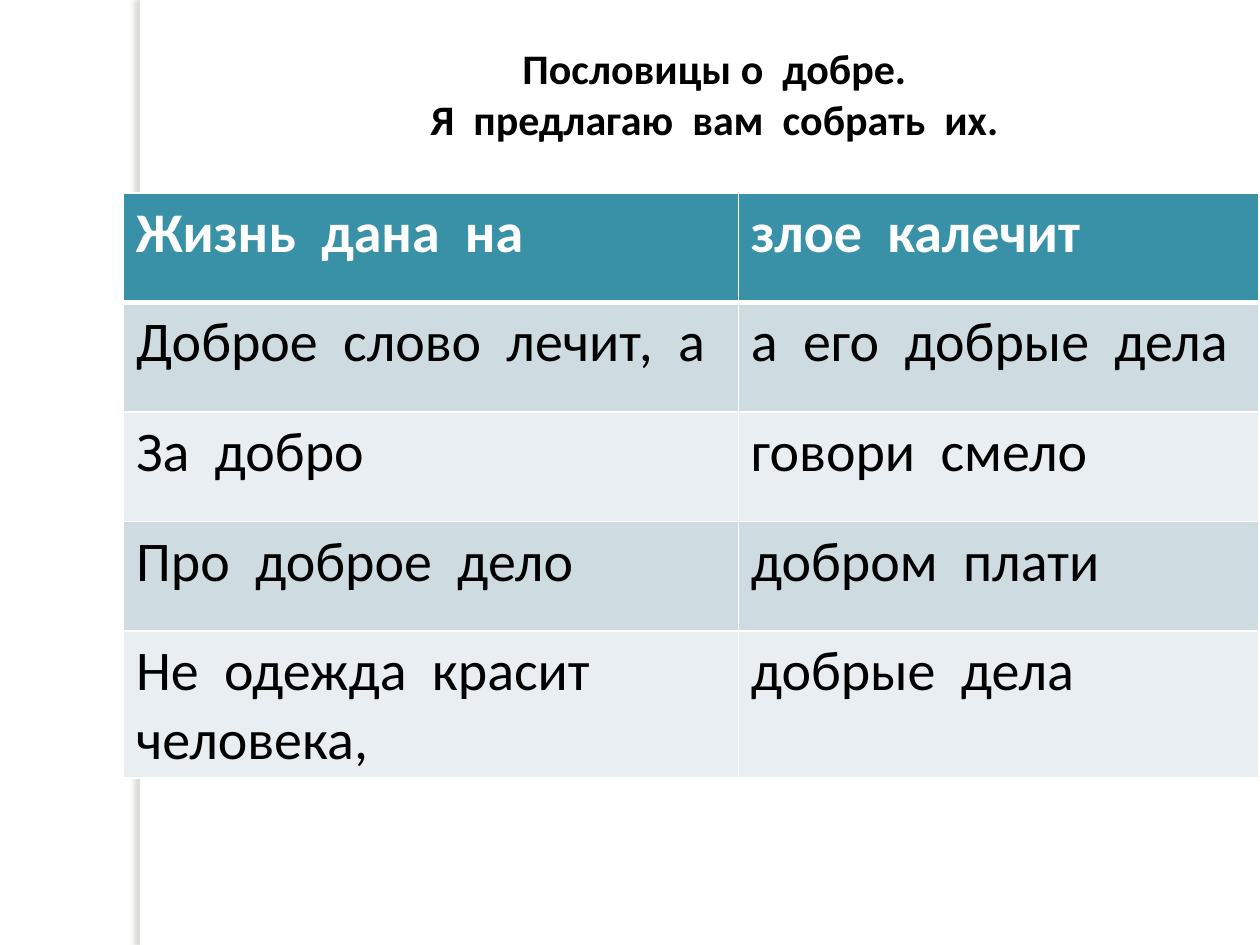
from dataclasses import dataclass

from lxml.etree import SubElement
from pptx import Presentation
from pptx.dml.color import RGBColor
from pptx.enum.shapes import MSO_SHAPE
from pptx.enum.text import MSO_ANCHOR, PP_ALIGN
from pptx.oxml.ns import qn
from pptx.util import Inches, Pt


@dataclass(frozen=True)
class Theme:
    font: str = "Calibri"
    title_size: int = 24
    table_size: int = 32
    white: str = "FFFFFF"
    ink: str = "000000"
    header: str = "3891A7"
    bands: tuple = ("CEDCE1", "E8EEF1")
    shadow: str = "736F63"
    rule: int = 1
    header_rule: int = 3


PROVERBS = [
    (["Жизнь  дана  на"], ["злое  калечит"]),
    (["Доброе  слово  лечит,  а"], ["а  его  добрые  дела"]),
    (["За  добро"], ["говори  смело"]),
    (["Про  доброе  дело"], ["добром  плати"]),
    (["Не  одежда  красит ", "человека,"], ["добрые  дела"]),
]
COLUMN_WIDTHS = (4.88, 4.13)
ROW_HEIGHT = 0.87


class SlideBuilder:
    def __init__(self, slide, theme):
        self.slide = slide
        self.theme = theme

    def add_lines(self, frame, lines, size, color, bold=False,
                  align=PP_ALIGN.LEFT):
        style = {"name": self.theme.font, "size": Pt(size), "bold": bold}
        for index, line in enumerate(lines):
            paragraph = frame.add_paragraph() if index else frame.paragraphs[0]
            paragraph.alignment = align
            run = paragraph.add_run()
            run.text = line
            for attribute, value in style.items():
                setattr(run.font, attribute, value)
            run.font.color.rgb = RGBColor.from_string(color)

    def margin_strip(self, left, top, width, height):
        """Add a white strip that casts a soft shadow to its left."""
        strip = self.slide.shapes.add_shape(
            MSO_SHAPE.RECTANGLE, *map(Inches, (left, top, width, height)))
        strip.fill.solid()
        strip.fill.fore_color.rgb = RGBColor.from_string(self.theme.white)
        strip.line.fill.background()
        strip.shadow.inherit = False
        effects = strip.element.spPr.find(qn("a:effectLst"))
        shadow = SubElement(effects, qn("a:outerShdw"), blurRad=str(Pt(3)),
                            dist=str(Pt(3)), dir=str(180 * 60000),
                            algn="tl", rotWithShape="0")
        color = SubElement(shadow, qn("a:srgbClr"), val=self.theme.shadow)
        SubElement(color, qn("a:alpha"), val="25000")

    def title(self, lines, left, top, width, height):
        box = self.slide.shapes.add_textbox(
            *map(Inches, (left, top, width, height)))
        box.text_frame.word_wrap = True
        box.text_frame.vertical_anchor = MSO_ANCHOR.TOP
        self.add_lines(box.text_frame, lines, self.theme.title_size,
                       self.theme.ink, bold=True, align=PP_ALIGN.CENTER)

    def border(self, cell, side, width):
        line = SubElement(cell._tc.get_or_add_tcPr(), qn(f"a:{side}"),
                          w=str(Pt(width)))
        fill = SubElement(line, qn("a:solidFill"))
        SubElement(fill, qn("a:srgbClr"), val=self.theme.white)

    def table(self, rows, left, top, column_widths, row_height):
        theme = self.theme
        table = self.slide.shapes.add_table(
            len(rows), len(column_widths), Inches(left), Inches(top),
            Inches(sum(column_widths)), Inches(row_height * len(rows))).table
        for column, width in zip(table.columns, column_widths):
            column.width = Inches(width)
        for r, row in enumerate(rows):
            is_header = r == 0
            fill = theme.header if is_header else theme.bands[(r - 1) % 2]
            color = theme.white if is_header else theme.ink
            widths = {
                "lnL": theme.rule,
                "lnR": theme.rule,
                "lnT": theme.header_rule if r == 1 else theme.rule,
                "lnB": theme.header_rule if is_header else theme.rule,
            }
            for c, lines in enumerate(row):
                cell = table.cell(r, c)
                self.add_lines(cell.text_frame, lines, theme.table_size, color,
                               bold=is_header)
                for side, width in widths.items():
                    self.border(cell, side, width)
                cell.fill.solid()
                cell.fill.fore_color.rgb = RGBColor.from_string(fill)


def main():
    deck = Presentation()
    deck.slide_width, deck.slide_height = Inches(10), Inches(7.5)
    slide = deck.slides.add_slide(deck.slide_layouts[6])
    builder = SlideBuilder(slide, Theme())
    builder.margin_strip(1.11, 0, 0.08, 7.5)
    builder.title(["Пословицы о  добре.", "Я  предлагаю  вам  собрать  их."],
                  1.77, 0.29, 7.8, 1.21)
    builder.table(PROVERBS, 0.98, 1.53, COLUMN_WIDTHS, ROW_HEIGHT)
    deck.save("out.pptx")


if __name__ == "__main__":
    main()
